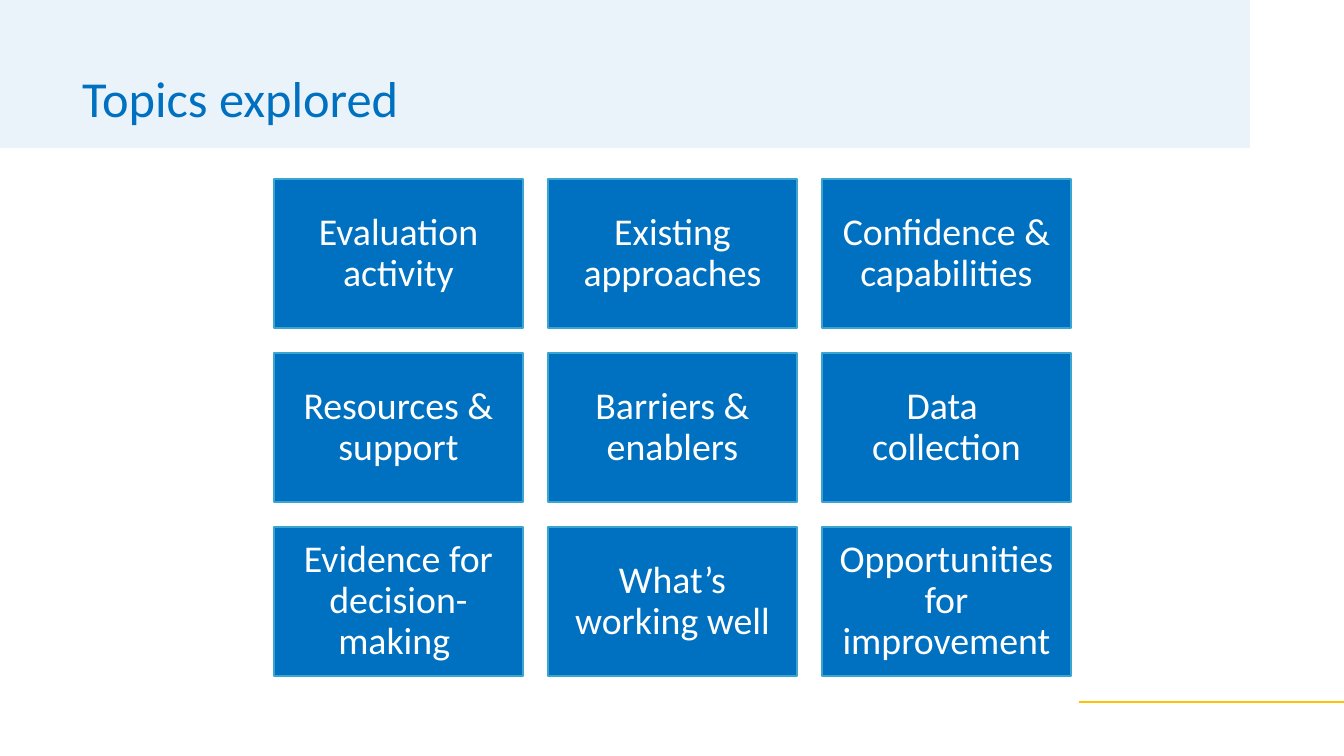
import pptx
import pptx.util
import pptx.dml.color
import pptx.enum.shapes
import pptx.enum.text
import lxml.etree

PX = 914400 / 100.8
THEME = {
    "blue": "0070C0", "edge": "3BA5D1", "gold": "FFC000", "white": "FFFFFF",
    "font": "Calibri", "title_size": 36, "topic_size": 27,
    "edge_width": 1, "rule_width": 1.25, "band_alpha": "8000",
}
TOPICS = [
    ["Evaluation activity", "Existing approaches", "Confidence & capabilities"],
    ["Resources & support", "Barriers & enablers", "Data \vcollection"],
    ["Evidence for decision-making ", "What’s working well", "Opportunities for improvement"],
]
GRID_LEFT, GRID_TOP = 274, 179
TILE_WIDTH, TILE_HEIGHT, GAP = 249, 149, 25


def px(*lengths):
    return [round(length * PX) for length in lengths]


def write(shape, text, size, color, alignment, frame_format):
    """Fill a shape with one formatted paragraph."""
    frame = shape.text_frame
    for name, value in frame_format.items():
        setattr(frame, name, value)
    frame.text = text
    paragraph = frame.paragraphs[0]
    paragraph.alignment = alignment
    paragraph.line_spacing = 0.9
    for run in paragraph.runs:
        run.font.name = THEME["font"]
        run.font.size = pptx.util.Pt(size)
        run.font.color.rgb = pptx.dml.color.RGBColor.from_string(THEME[color])


blue, edge, gold = (
    pptx.dml.color.RGBColor.from_string(THEME[name]) for name in ("blue", "edge", "gold")
)
rectangle = pptx.enum.shapes.MSO_SHAPE.RECTANGLE
align = pptx.enum.text.PP_ALIGN
anchor = pptx.enum.text.MSO_ANCHOR

deck = pptx.Presentation()
deck.slide_width, deck.slide_height = px(1344, 756)
slide = deck.slides.add_slide(deck.slide_layouts[5])

# Title
title = slide.shapes.title
title.left, title.top, title.width, title.height = px(72, 69, 1219, 104)
write(title, "Topics explored", THEME["title_size"], "blue", align.LEFT, {
    "word_wrap": True,
    "auto_size": pptx.enum.text.MSO_AUTO_SIZE.NONE,
    "vertical_anchor": anchor.TOP,
})

# Topic tiles
inset = px(11)[0]
tile_format = {
    "word_wrap": True, "vertical_anchor": anchor.MIDDLE,
    "margin_left": inset, "margin_right": inset,
    "margin_top": inset, "margin_bottom": inset,
}
for row, topics in enumerate(TOPICS):
    for column, topic in enumerate(topics):
        left = GRID_LEFT + column * (TILE_WIDTH + GAP)
        top = GRID_TOP + row * (TILE_HEIGHT + GAP)
        tile = slide.shapes.add_shape(rectangle, *px(left, top, TILE_WIDTH, TILE_HEIGHT))
        tile.shadow.inherit = False
        tile.fill.solid()
        tile.fill.fore_color.rgb = blue
        tile.line.color.rgb = edge
        tile.line.width = pptx.util.Pt(THEME["edge_width"])
        write(tile, topic, THEME["topic_size"], "white", align.CENTER, tile_format)

# Translucent header band
band = slide.shapes.add_shape(rectangle, *px(0, 0, 1250, 148))
band.shadow.inherit = False
band.fill.solid()
band.fill.fore_color.rgb = blue
band.line.fill.background()
band_color = band.fill._xPr.find(".//" + pptx.oxml.ns.qn("a:srgbClr"))
lxml.etree.SubElement(band_color, pptx.oxml.ns.qn("a:alpha"), val=THEME["band_alpha"])

# Footer rule
rule = slide.shapes.add_connector(
    pptx.enum.shapes.MSO_CONNECTOR.STRAIGHT, *px(1079, 702, 1344, 702)
)
rule.line.color.rgb = gold
rule.line.width = pptx.util.Pt(THEME["rule_width"])
lxml.etree.SubElement(rule._element.spPr, pptx.oxml.ns.qn("a:effectLst"))

deck.save("out.pptx")
